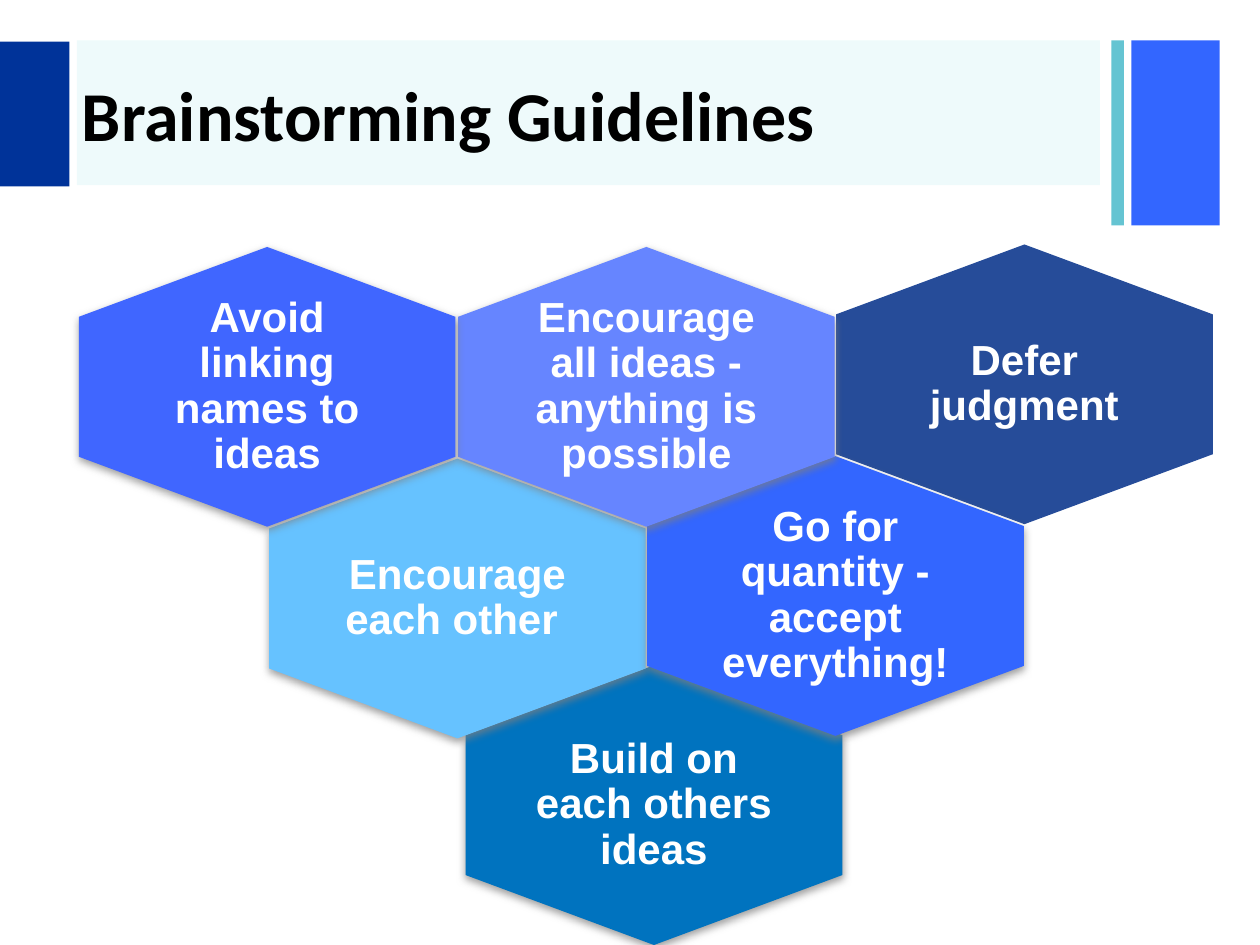
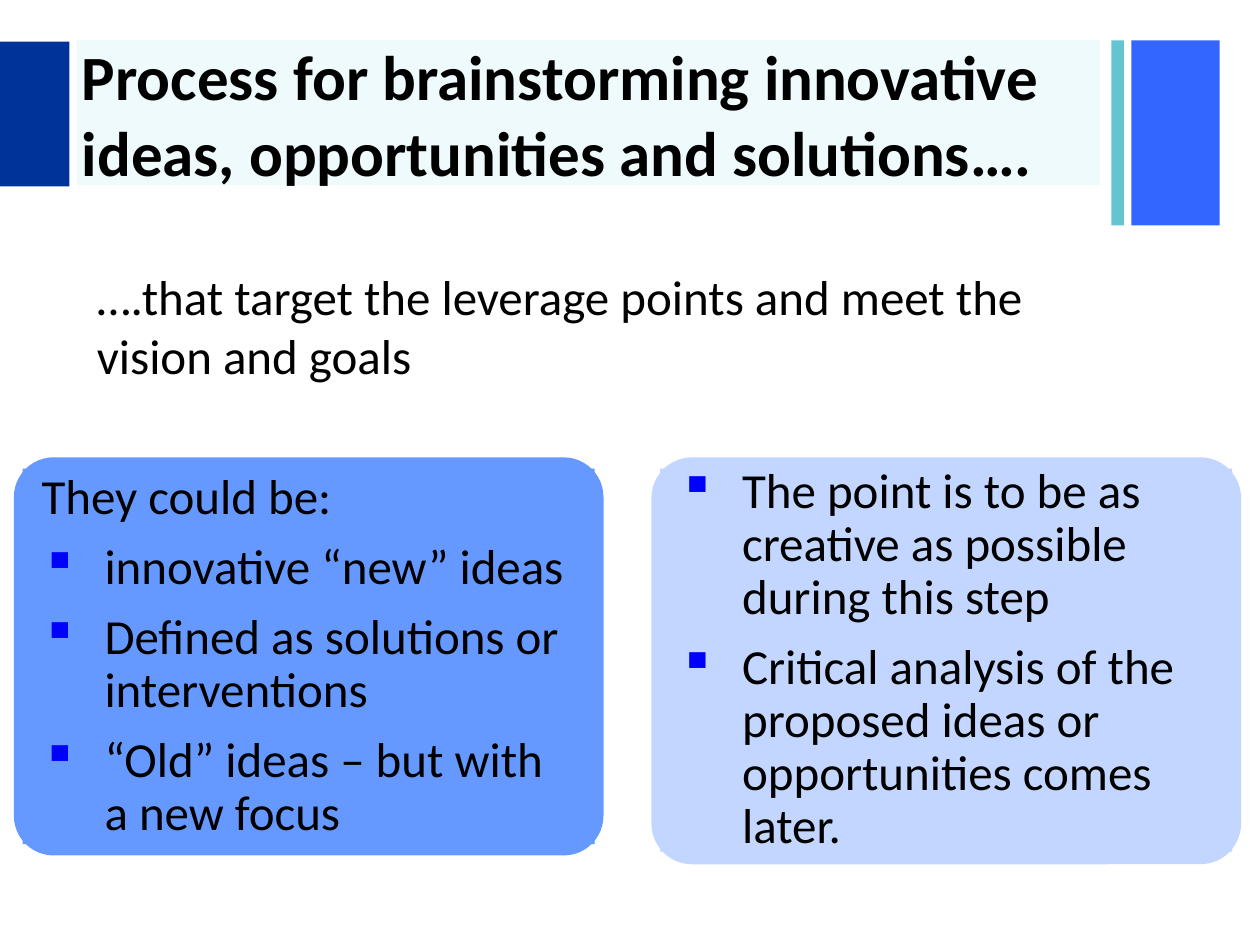
from lxml.etree import SubElement
from pptx import Presentation
from pptx.dml.color import RGBColor
from pptx.enum.shapes import MSO_SHAPE
from pptx.enum.text import MSO_ANCHOR, MSO_AUTO_SIZE, PP_ALIGN
from pptx.oxml.ns import qn
from pptx.util import Inches, Pt

BLACK, WHITE, BLUE = "000000", "FFFFFF", "3366FF"
BANDS = [
    (8.98, 0.32, 0.7, 1.47, BLUE, None),
    (8.82, 0.32, 0.1, 1.47, "65C4D2", None),
    (0.61, 0.32, 8.12, 1.15, "14C5D0", 7),
    (0, 0.33, 0.55, 1.15, "003399", None),
]
HEX_W, HEX_H = 2.22, 2.99
HEXES = [
    (8.13, 3.05, "264C99", "Defer judgment"),
    (5.19, 6.39, "0073BF", "Build on each others ideas"),
    (3.63, 4.75, "66C2FF", "Encourage each other "),
    (6.63, 4.73, BLUE, "Go for quantity - accept everything!"),
    (5.13, 3.07, "6685FF", "Encourage all ideas - anything is possible"),
    (2.12, 3.07, "4066FF", "Avoid linking names to ideas"),
]
LEAD = "They could be:"
KINDS = [
    "innovative “new” ideas",
    "Defined as solutions or interventions",
    "“Old” ideas – but with a new focus",
]
POINTS = [
    "The point is to be as creative as possible during this step",
    "Critical analysis of the proposed ideas or opportunities comes later.",
]


def color(code):
    """Turn a hex string into a colour."""
    return RGBColor.from_string(code)


def node(parent, tag, **attrs):
    """Append a drawing element with the given attributes."""
    return SubElement(parent, qn(f"a:{tag}"), {k: str(v) for k, v in attrs.items()})


def draw(shapes, kind, x, y, w, h, fill, alpha=None):
    """Add a flat filled shape without line or shadow."""
    shape = shapes.add_shape(kind, Inches(x), Inches(y), Inches(w), Inches(h))
    shape.shadow.inherit = False
    shape.fill.solid()
    shape.fill.fore_color.rgb = color(fill)
    shape.line.fill.background()
    if alpha is not None:
        tone = shape.element.spPr.find(f"{qn('a:solidFill')}/{qn('a:srgbClr')}")
        node(tone, "alpha", val=alpha * 1000)
    return shape


def style(para, font, size, ink, bold=False, align=PP_ALIGN.LEFT):
    """Format a paragraph and its runs."""
    para.alignment = align
    for run in para.runs:
        run.font.name = font
        run.font.size = Pt(size)
        run.font.bold = bold
        run.font.color.rgb = color(ink)


def pad(frame, inset):
    """Wrap and centre a frame with equal insets."""
    frame.word_wrap = True
    frame.vertical_anchor = MSO_ANCHOR.MIDDLE
    frame.margin_left = frame.margin_right = Inches(inset)
    frame.margin_top = frame.margin_bottom = Inches(inset)


def shade(shape):
    """Give a shape a soft grey shadow straight below it."""
    effects = shape.element.spPr.find(qn("a:effectLst"))
    outer = node(effects, "outerShdw", blurRad=Pt(5), dist=Pt(2), dir=5400000,
                 algn="ctr", rotWithShape=0)
    node(node(outer, "srgbClr", val="808080"), "alpha", val=75000)


def bullet(para):
    """Give a paragraph a blue square bullet and a hanging indent."""
    props = para._p.get_or_add_pPr()
    props.set("marL", str(Inches(0.5)))
    props.set("indent", str(Inches(-0.5)))
    node(node(props, "buClr"), "srgbClr", val="0000FF")
    node(props, "buChar", char="▪")


def start(deck, text, size):
    """Add a slide with the shared bands and its title."""
    slide = deck.slides.add_slide(deck.slide_layouts[5])
    for x, y, w, h, fill, alpha in BANDS:
        draw(slide.shapes, MSO_SHAPE.RECTANGLE, x, y, w, h, fill, alpha)
    title = slide.shapes.title
    title.left, title.top = Inches(0.55), Inches(0.34)
    title.width, title.height = Inches(8.26), Inches(1.12)
    frame = title.text_frame
    frame.text = text
    frame.auto_size = MSO_AUTO_SIZE.NONE
    frame.vertical_anchor = MSO_ANCHOR.MIDDLE
    style(frame.paragraphs[0], "Calibri", size, BLACK, True)
    slide.shapes.element.append(title.element)
    return slide


def hexagon(slide, x, y, fill, text, shadow):
    """Draw an upright hexagon with a label, centred at a point."""
    shapes = slide.shapes.add_group_shape().shapes
    cell = draw(shapes, MSO_SHAPE.HEXAGON, x - HEX_W / 2, y - HEX_H / 2,
                HEX_W, HEX_H, fill)
    cell.rotation = 90
    if shadow:
        shade(cell)
    w, h = 2.06, 1.53
    label = shapes.add_textbox(Inches(x - w / 2), Inches(y - h / 2),
                               Inches(w), Inches(h))
    frame = label.text_frame
    pad(frame, 0.03)
    frame.text = text
    para = frame.paragraphs[0]
    para.line_spacing = 0.9
    style(para, "Arial", 24, WHITE, True, PP_ALIGN.CENTER)


def panel(slide, x, h, inner, fill, lines):
    """Draw a rounded panel with a list of lines."""
    shapes = slide.shapes.add_group_shape().shapes
    card = draw(shapes, MSO_SHAPE.ROUNDED_RECTANGLE, x, 3.63, 4.68, h, fill)
    card.adjustments[0] = 0.1
    body = draw(shapes, MSO_SHAPE.RECTANGLE, x + 0.07, 3.72, 4.54, inner, fill)
    frame = body.text_frame
    frame.text = "\n".join(lines)
    pad(frame, 0.15)
    for para in frame.paragraphs:
        style(para, "Calibri", 28, BLACK)
        para.line_spacing = 0.9
        para.space_after = Pt(9.8)
        if para.text != LEAD:
            bullet(para)


def note(slide, text):
    """Add the line of text under the title."""
    box = slide.shapes.add_textbox(Inches(0.67), Inches(2.07),
                                   Inches(8.26), Inches(1.5))
    box.text_frame.word_wrap = True
    box.text_frame.text = text
    style(box.text_frame.paragraphs[0], "Calibri", 28, BLACK)


def main():
    """Build and save the deck."""
    deck = Presentation()
    deck.slide_width, deck.slide_height = Inches(10), Inches(7.5)

    rules = start(deck, "Brainstorming Guidelines", 40)
    for i, (x, y, fill, text) in enumerate(HEXES):
        hexagon(rules, x, y, fill, text, shadow=i > 0)

    steps = start(deck, "Process for brainstorming innovative ideas, "
                        "opportunities and solutions….", 36)
    note(steps, "….that target the leverage points and meet the vision and goals")
    panel(steps, 0.11, 3.16, 2.98, "6699FF", [LEAD] + KINDS)
    panel(steps, 5.17, 3.23, 3.04, "C2D6FF", POINTS)

    deck.save("out.pptx")


if __name__ == "__main__":
    main()
